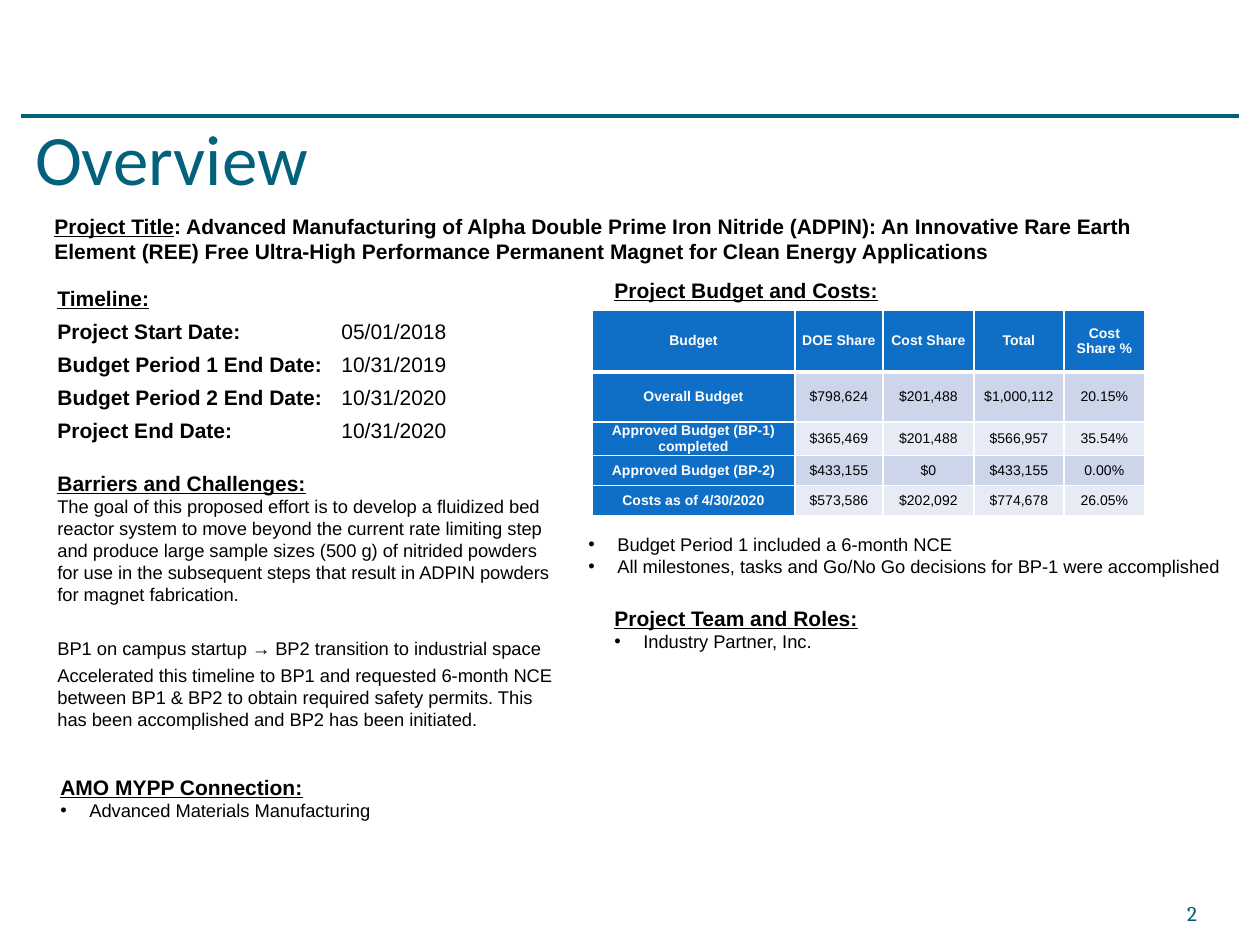
from lxml import etree
from pptx import Presentation
from pptx.dml.color import RGBColor
from pptx.enum.shapes import MSO_CONNECTOR
from pptx.enum.text import MSO_ANCHOR, PP_ALIGN
from pptx.oxml.ns import qn
from pptx.util import Emu, Pt

STRAIGHT = MSO_CONNECTOR.STRAIGHT
TOP, MIDDLE, BOTTOM = MSO_ANCHOR.TOP, MSO_ANCHOR.MIDDLE, MSO_ANCHOR.BOTTOM
LEFT, CENTER, RIGHT = PP_ALIGN.LEFT, PP_ALIGN.CENTER, PP_ALIGN.RIGHT

COLORS = {
    "rule": "04617B", "number": "045C75", "text": "000000", "white": "FFFFFF",
    "head": "0F6FC6", "band": "CCD5EA", "light": "E7EBF5",
}
HEAD, BODY = 12, 10.5
BULLET_INDENT = 29
DATE_TAB = 284

TIMELINE = [
    ("Project Start Date:", "05/01/2018"),
    ("Budget Period 1 End Date:", "10/31/2019"),
    ("Budget Period 2 End Date:", "10/31/2020"),
    ("Project End Date:", "10/31/2020"),
]
BUDGET = [
    ["Budget", "DOE Share", "Cost Share", "Total", "Cost Share %"],
    ["Overall Budget", "$798,624", "$201,488", "$1,000,112", "20.15%"],
    ["Approved Budget (BP-1)\ncompleted", "$365,469", "$201,488", "$566,957", "35.54%"],
    ["Approved Budget (BP-2)", "$433,155", "$0", "$433,155", "0.00%"],
    ["Costs as of 4/30/2020", "$573,586", "$202,092", "$774,678", "26.05%"],
]
COL_WIDTHS = [203, 88, 91, 90, 81]
ROW_HEIGHTS = [62, 50, 30, 30, 30]


def px(n):
    return Emu(round(n * 914400 / 126))


def rgb(name):
    return RGBColor.from_string(COLORS[name])


def add_run(p, text, size=BODY, bold=False, underline=False, color="text", font="Arial"):
    r = p.add_run()
    r.text = text
    r.font.size = Pt(size)
    r.font.name = font
    r.font.bold = bold
    r.font.underline = underline
    r.font.color.rgb = rgb(color)


def add_heading(p, text):
    add_run(p, text, HEAD, True, True)


def add_bullet(p, text):
    pPr = p._p.get_or_add_pPr()
    pPr.set("marL", str(px(BULLET_INDENT)))
    pPr.set("indent", str(px(-BULLET_INDENT)))
    etree.SubElement(pPr, qn("a:buFont")).set("typeface", "Arial")
    etree.SubElement(pPr, qn("a:buChar")).set("char", "•")
    add_run(p, text)


def add_text_box(s, box, anchor=TOP, inset=True):
    tf = s.shapes.add_textbox(*map(px, box)).text_frame
    tf.word_wrap = True
    tf.vertical_anchor = anchor
    if not inset:
        tf.margin_left = tf.margin_top = tf.margin_right = tf.margin_bottom = 0
    return tf


def add_header(s, box):
    x, y, w, h = box
    line = s.shapes.add_connector(STRAIGHT, px(x), px(y), px(x + w), px(y))
    line.line.color.rgb = rgb("rule")
    line.line.width = Pt(2.25)
    etree.SubElement(line._element.spPr, qn("a:effectLst"))
    tf = add_text_box(s, (x + 14, y, 850, h), BOTTOM, False)
    add_run(tf.paragraphs[0], "Overview", 40.5, color="rule", font="Calibri")


def add_project_title(s, box):
    p = add_text_box(s, box).paragraphs[0]
    add_heading(p, "Project Title")
    add_run(p, ": Advanced Manufacturing of Alpha Double Prime Iron Nitride (ADPIN): "
               "An Innovative Rare Earth Element (REE) Free Ultra-High Performance "
               "Permanent Magnet for Clean Energy Applications", HEAD, True)


def add_timeline(s, box):
    tf = add_text_box(s, box)
    p = tf.paragraphs[0]
    add_heading(p, "Timeline:")
    p.space_after = Pt(4.5)
    for label, date in TIMELINE:
        p = tf.add_paragraph()
        p.space_after = Pt(4.5)
        tabs = etree.SubElement(p._p.get_or_add_pPr(), qn("a:tabLst"))
        tab = etree.SubElement(tabs, qn("a:tab"))
        tab.set("pos", str(px(DATE_TAB)))
        tab.set("algn", "l")
        add_run(p, label, HEAD, True)
        add_run(p, "\t" + date, HEAD)


def add_barriers(s, box):
    tf = add_text_box(s, box)
    add_heading(tf.paragraphs[0], "Barriers and Challenges:")
    for text, before in [
        ("The goal of this proposed effort is to develop a fluidized bed reactor system "
         "to move beyond the current rate limiting step and produce large sample sizes "
         "(500 g) of nitrided powders for use in the subsequent steps that result in "
         "ADPIN powders for magnet fabrication.", 0),
        ("BP1 on campus startup → BP2 transition to industrial space", 15),
        ("Accelerated this timeline to BP1 and requested 6-month NCE between BP1 & BP2 "
         "to obtain required safety permits. This has been accomplished and BP2 has "
         "been initiated.", 0),
    ]:
        p = tf.add_paragraph()
        p.space_before = Pt(before)
        p.space_after = Pt(3)
        add_run(p, text)


def add_bullet_list(s, box, items, heading=None):
    tf = add_text_box(s, box)
    p = tf.paragraphs[0]
    if heading:
        add_heading(p, heading)
    for i, item in enumerate(items):
        add_bullet(tf.add_paragraph() if heading or i else p, item)


def set_borders(cell, widths):
    tcPr = cell._tc.get_or_add_tcPr()
    for side, width in zip("LRTB", widths):
        ln = etree.SubElement(tcPr, qn("a:ln" + side))
        ln.set("w", str(Pt(width)))
        fill = etree.SubElement(ln, qn("a:solidFill"))
        etree.SubElement(fill, qn("a:srgbClr")).set("val", COLORS["white"])


def add_budget(s, box):
    x, y, w, h = box
    add_heading(add_text_box(s, (x + 10, y, 339, 38)).paragraphs[0],
                "Project Budget and Costs:")
    table = s.shapes.add_table(len(BUDGET), len(COL_WIDTHS), px(x), px(y + 39),
                               px(w), px(h - 39)).table
    for col, width in zip(table.columns, COL_WIDTHS):
        col.width = px(width)
    for i, (row, height) in enumerate(zip(BUDGET, ROW_HEIGHTS)):
        table.rows[i].height = px(height)
        for j, text in enumerate(row):
            cell = table.cell(i, j)
            is_head = i == 0 or j == 0
            set_borders(cell, (1, 1, 3 if i == 1 else 1, 3 if i == 0 else 1))
            cell.fill.solid()
            cell.fill.fore_color.rgb = rgb("head" if is_head else "band" if i % 2 else "light")
            cell.vertical_anchor = MIDDLE
            cell.margin_left = cell.margin_right = px(7)
            cell.margin_top = cell.margin_bottom = 0
            tf = cell.text_frame
            for k, part in enumerate(text.split("\n")):
                p = tf.add_paragraph() if k else tf.paragraphs[0]
                p.alignment = CENTER
                add_run(p, part, 8, is_head, color="white" if is_head else "text")


def add_page_number(s, box):
    p = add_text_box(s, box, BOTTOM, False).paragraphs[0]
    p.alignment = RIGHT
    add_run(p, "2", HEAD, color="number", font="Cambria")


def main():
    prs = Presentation()
    prs.slide_width, prs.slide_height = px(1260), px(945)
    s = prs.slides.add_slide(prs.slide_layouts[6])
    add_header(s, (21, 116, 1218, 84))
    add_project_title(s, (42, 207, 1152, 63))
    add_timeline(s, (45, 279, 449, 175))
    add_barriers(s, (45, 464, 522, 431))
    add_bullet_list(s, (48, 768, 403, 60), ["Advanced Materials Manufacturing"],
                    "AMO MYPP Connection:")
    add_budget(s, (592, 271, 553, 241))
    add_bullet_list(s, (576, 527, 687, 57), [
        "Budget Period 1 included a 6-month NCE",
        "All milestones, tasks and Go/No Go decisions for BP-1 were accomplished",
    ])
    add_bullet_list(s, (602, 599, 330, 60), ["Industry Partner, Inc."],
                    "Project Team and Roles:")
    add_page_number(s, (1092, 876, 105, 50))
    prs.save("out.pptx")


if __name__ == "__main__":
    main()
